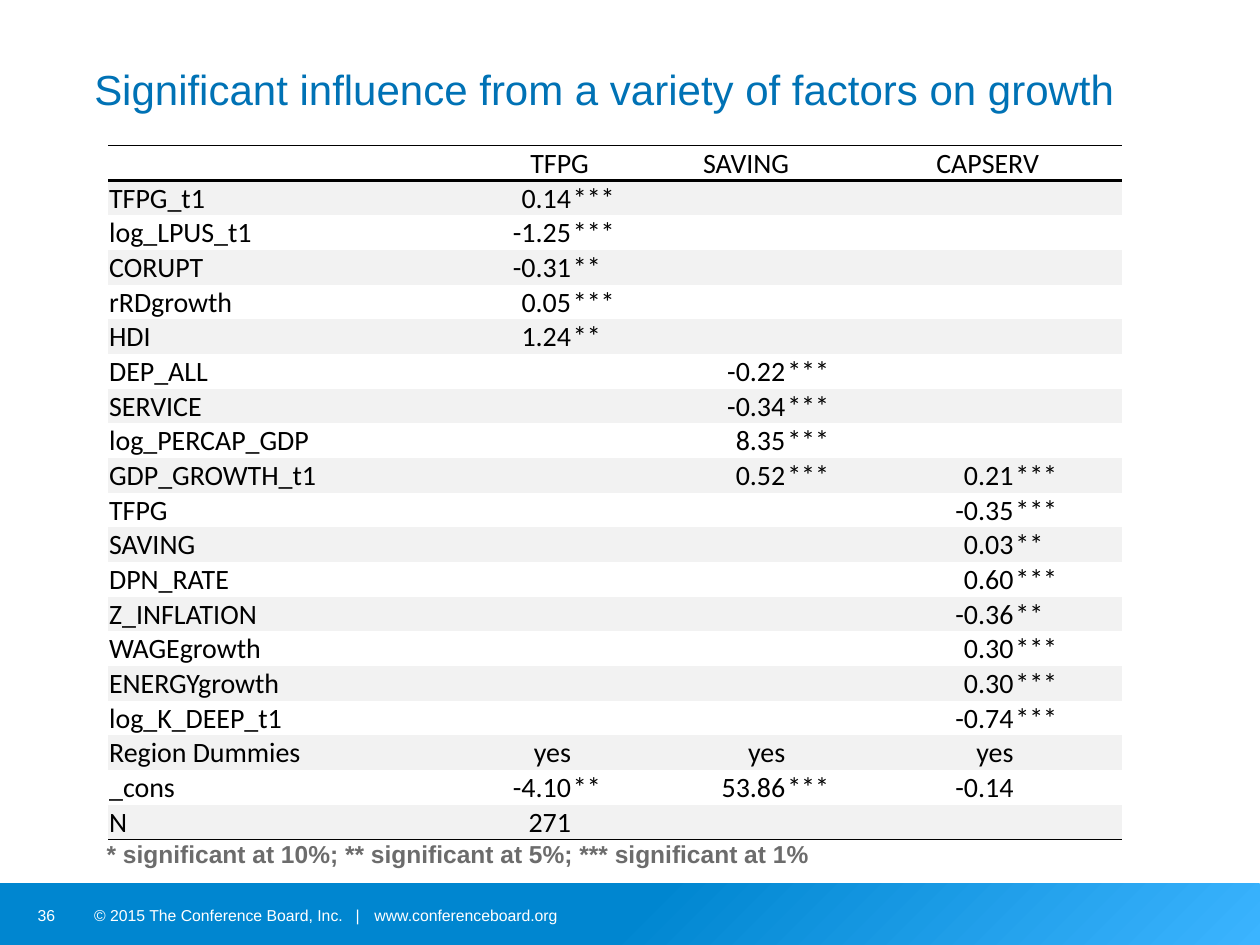
import pptx
import pptx.util
import pptx.dml.color
import pptx.enum.shapes
import pptx.enum.text
import pptx.oxml
import pptx.oxml.ns
from lxml import etree

Cm = pptx.util.Cm
Pt = pptx.util.Pt
Align = pptx.enum.text.PP_ALIGN
Anchor = pptx.enum.text.MSO_ANCHOR
qn = pptx.oxml.ns.qn

COLOURS = {
    "title": "0072B5",
    "note": "6C6C6C",
    "black": "000000",
    "white": "FFFFFF",
    "stripe": "F2F2F2",
    "band_light": "3BB4FF",
    "band_dark": "0086D0",
}
PLAIN_TABLE_STYLE = "{2D5ABB26-0587-4C30-8999-92F81FD0307C}"
CELL_SIZE = 16
ROW_HEIGHT = 0.7
COLUMN_WIDTHS = [7.5, 1.85, 1.35, 2.97, 1.35, 3.25, 2.17]
MODELS = ["TFPG", "SAVING", "CAPSERV"]
RESULTS = [
    ("TFPG_t1", "0.14***", "", ""),
    ("log_LPUS_t1", "-1.25***", "", ""),
    ("CORUPT", "-0.31**", "", ""),
    ("rRDgrowth", "0.05***", "", ""),
    ("HDI", "1.24**", "", ""),
    ("DEP_ALL", "", "-0.22***", ""),
    ("SERVICE", "", "-0.34***", ""),
    ("log_PERCAP_GDP", "", "8.35***", ""),
    ("GDP_GROWTH_t1", "", "0.52***", "0.21***"),
    ("TFPG", "", "", "-0.35***"),
    ("SAVING", "", "", "0.03**"),
    ("DPN_RATE", "", "", "0.60***"),
    ("Z_INFLATION", "", "", "-0.36**"),
    ("WAGEgrowth", "", "", "0.30***"),
    ("ENERGYgrowth", "", "", "0.30***"),
    ("log_K_DEEP_t1", "", "", "-0.74***"),
    ("Region Dummies", "yes", "yes", "yes"),
    ("_cons", "-4.10**", "53.86***", "-0.14"),
    ("N", "271", "", ""),
]


def colour(name):
    return pptx.dml.color.RGBColor.from_string(COLOURS[name])


def add_span(para, text, size, colour_name, font="Arial", bold=False):
    span = para.add_run()
    span.text = text
    span.font.name = font
    span.font.size = Pt(size)
    span.font.bold = bold
    span.font.color.rgb = colour(colour_name)


def set_margins(frame, margin):
    frame.margin_left = frame.margin_right = Cm(margin)
    frame.margin_top = frame.margin_bottom = Cm(margin)


def add_title(page, text):
    title = page.shapes.title
    title.left, title.top, title.width, title.height = Cm(1.9), Cm(1.27), Cm(22.25), Cm(2.3)
    frame = title.text_frame
    set_margins(frame, 0)
    frame.vertical_anchor = Anchor.TOP
    para = frame.paragraphs[0]
    para.alignment = Align.LEFT
    add_span(para, text, 24, "title")


def add_text(page, place, text, size, colour_name, bold=False, margin=None, tab=None):
    box = page.shapes.add_textbox(*map(Cm, place))
    frame = box.text_frame
    frame.word_wrap = True
    frame.vertical_anchor = Anchor.MIDDLE
    if margin is not None:
        set_margins(frame, margin)
    para = frame.paragraphs[0]
    if tab is not None:
        tabs = etree.SubElement(para._p.get_or_add_pPr(), qn("a:tabLst"))
        etree.SubElement(tabs, qn("a:tab"), pos=str(Cm(tab)), algn="l")
    add_span(para, text, size, colour_name, bold=bold)
    return box


def add_band(page):
    band = page.shapes.add_shape(
        pptx.enum.shapes.MSO_SHAPE.RECTANGLE, 0, Cm(17.82), Cm(25.4), Cm(1.23))
    band.shadow.inherit = False
    band.line.fill.background()
    band.fill.gradient()
    band.fill.gradient_angle = 135
    stops = band.fill.gradient_stops
    for stop, position, name in zip(stops, (0, 0.5), ("band_light", "band_dark")):
        stop.position = position
        stop.color.rgb = colour(name)


def set_border(cell, side, width):
    line = etree.SubElement(cell._tc.get_or_add_tcPr(), qn(side), w=str(Pt(width)))
    fill = etree.SubElement(line, qn("a:solidFill"))
    etree.SubElement(fill, qn("a:srgbClr"), val=COLOURS["black"])


def fill_cell(cell, text, align, fill_name):
    cell.fill.solid()
    cell.fill.fore_color.rgb = colour(fill_name)
    cell.vertical_anchor = Anchor.BOTTOM
    cell.margin_left = cell.margin_right = cell.margin_top = Cm(0.02)
    cell.margin_bottom = 0
    para = cell.text_frame.paragraphs[0]
    para.alignment = align
    if text:
        add_span(para, text, CELL_SIZE, "black", "Calibri")
    else:
        etree.SubElement(para._p, qn("a:endParaRPr"), sz=str(CELL_SIZE * 100))


def table_rows():
    header = [""]
    for model in MODELS:
        header += [model, ""]
    yield header
    for label, *values in RESULTS:
        row = [label]
        for value in values:
            number = value.rstrip("*")
            row += [number, value[len(number):]]
        yield row


def add_results(page):
    rows = list(table_rows())
    holder = page.shapes.add_table(
        len(rows), len(COLUMN_WIDTHS), Cm(2.18), Cm(2.94),
        Cm(sum(COLUMN_WIDTHS)), Cm(ROW_HEIGHT * len(rows)))
    table = holder.table
    table.first_row = table.horz_banding = False
    table._tbl.tblPr.find(qn("a:tableStyleId")).text = PLAIN_TABLE_STYLE
    for column, width in zip(table.columns, COLUMN_WIDTHS):
        column.width = Cm(width)
    for index, row in enumerate(rows):
        table.rows[index].height = Cm(ROW_HEIGHT)
        for position, text in enumerate(row):
            cell = table.cell(index, position)
            if index == 0:
                set_border(cell, "a:lnT", 0.5)
                set_border(cell, "a:lnB", 2)
                align = Align.CENTER
            else:
                align = Align.RIGHT if position % 2 else Align.LEFT
            if index == len(rows) - 1:
                set_border(cell, "a:lnB", 0.5)
            fill_cell(cell, text, align, "stripe" if index % 2 else "white")
    for position in range(1, len(COLUMN_WIDTHS), 2):
        table.cell(0, position).merge(table.cell(0, position + 1))


def add_footer(page):
    add_band(page)
    add_text(page, (7.55, 17.95, 4.14, 1.02), "www.conferenceboard.org", 9, "white", margin=0)
    add_text(page, (1.65, 18.01, 6.4, 0.89), "© 2015 The Conference Board, Inc.\t|",
             9, "white", tab=5.27)
    add_text(page, (0.76, 17.95, 1.07, 1.02), "36", 9, "white", margin=0)


def main():
    deck = pptx.Presentation()
    deck.slide_width, deck.slide_height = Cm(25.4), Cm(19.05)
    page = deck.slides.add_slide(deck.slide_layouts[5])
    add_footer(page)
    add_title(page, "Significant influence from a variety of factors on growth")
    note = add_text(page, (1.9, 16.79, 20.98, 0.86),
                    "* significant at 10%; ** significant at 5%; *** significant at 1%",
                    14, "note", bold=True)
    note.text_frame.auto_size = pptx.enum.text.MSO_AUTO_SIZE.SHAPE_TO_FIT_TEXT
    add_results(page)
    deck.save("out.pptx")


if __name__ == "__main__":
    main()
